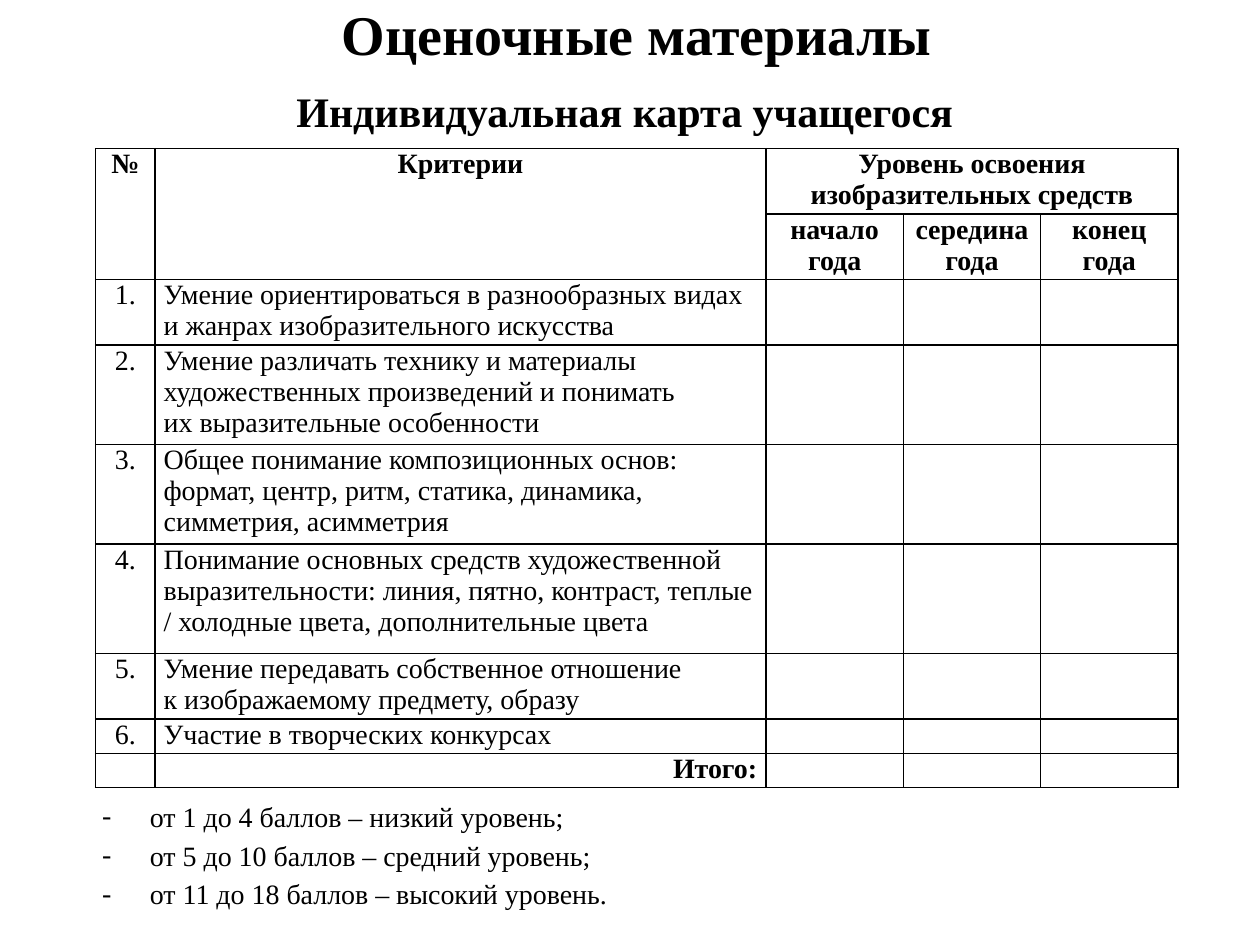
from pptx import Presentation
from pptx.dml.color import RGBColor
from pptx.enum.text import MSO_ANCHOR, MSO_AUTO_SIZE, PP_ALIGN
from pptx.oxml.ns import qn
from pptx.util import Inches, Pt
from lxml import etree

LEFT, CENTER, RIGHT, JUSTIFY = PP_ALIGN.LEFT, PP_ALIGN.CENTER, PP_ALIGN.RIGHT, PP_ALIGN.JUSTIFY
TOP, MIDDLE = MSO_ANCHOR.TOP, MSO_ANCHOR.MIDDLE
NO_AUTOFIT = MSO_AUTO_SIZE.NONE
FONT = "Times New Roman"
BLACK = "000000"
BODY_SIZE = 16

COLUMN_WIDTHS = [0.47, 4.85, 1.09, 1.09, 1.09]
ROW_HEIGHTS = [0.52, 0.52, 0.52, 0.79, 0.79, 0.87, 0.52, 0.25, 0.25]
PERIODS = ["начало года", "середина года", "конец года"]
CRITERIA = [
    "Умение ориентироваться в разнообразных видах и жанрах изобразительного искусства",
    "Умение различать технику и материалы художественных произведений и понимать\n"
    "их выразительные особенности",
    "Общее понимание композиционных основ: формат, центр, ритм, статика, динамика, "
    "симметрия, асимметрия",
    "Понимание основных средств художественной выразительности: линия, пятно, контраст, "
    "теплые / холодные цвета, дополнительные цвета",
    "Умение передавать собственное отношение\nк изображаемому предмету, образу",
    "Участие в творческих конкурсах",
]
LEVELS = [
    "от 1 до 4 баллов – низкий уровень;",
    "от 5 до 10 баллов – средний уровень;",
    "от 11 до 18 баллов – высокий уровень.",
]


def color(hex_string):
    return RGBColor.from_string(hex_string)


def place(shape, box):
    shape.left, shape.top, shape.width, shape.height = [Inches(length) for length in box]


def format_text(text_frame, size, bold, alignment):
    for paragraph in text_frame.paragraphs:
        paragraph.alignment = alignment
        for run in paragraph.runs:
            run.font.name = FONT
            run.font.size = Pt(size)
            run.font.bold = bold
            run.font.color.rgb = color(BLACK)


def fill_title(title, box):
    place(title, box)
    text_frame = title.text_frame
    text_frame.text = "Оценочные материалы"
    text_frame.auto_size = NO_AUTOFIT
    text_frame.vertical_anchor = MIDDLE
    format_text(text_frame, 32, True, CENTER)


def add_subheading(slide, box):
    shape = slide.shapes.add_textbox(*[Inches(length) for length in box])
    text_frame = shape.text_frame
    text_frame.word_wrap = True
    text_frame.text = "Индивидуальная карта учащегося "
    text_frame.paragraphs[0].line_spacing = 1.15
    text_frame.paragraphs[0].space_after = Pt(10)
    format_text(text_frame, 24, True, CENTER)


def fill_levels(body, box):
    place(body, box)
    text_frame = body.text_frame
    text_frame.text = "\n".join(LEVELS)
    text_frame.auto_size = NO_AUTOFIT
    text_frame.vertical_anchor = TOP
    for index, paragraph in enumerate(text_frame.paragraphs):
        properties = paragraph._p.get_or_add_pPr()
        properties.set("marL", str(Inches(0.38)))
        properties.set("indent", str(Inches(-0.38)))
        etree.SubElement(properties, qn("a:buFont")).set("typeface", FONT)
        etree.SubElement(properties, qn("a:buChar")).set("char", "-")
        paragraph.line_spacing = 1.1
        paragraph.space_before = Pt(1 if index else 0)
    format_text(text_frame, BODY_SIZE, False, JUSTIFY)


def format_cell(cell):
    properties = cell._tc.get_or_add_tcPr()
    for side in ("a:lnL", "a:lnR", "a:lnT", "a:lnB"):
        line = etree.SubElement(properties, qn(side), w=str(Pt(1)))
        fill = etree.SubElement(line, qn("a:solidFill"))
        etree.SubElement(fill, qn("a:srgbClr")).set("val", BLACK)
    cell.fill.background()
    cell.margin_left = cell.margin_right = Inches(0.07)
    cell.margin_top = cell.margin_bottom = 0
    end_properties = cell.text_frame.paragraphs[0]._p.get_or_add_endParaRPr()
    end_properties.set("sz", str(BODY_SIZE * 100))


def write_cell(cell, text, bold=False, alignment=LEFT):
    cell.text_frame.text = text
    format_text(cell.text_frame, BODY_SIZE, bold, alignment)


def add_criteria_table(slide, box):
    frame = slide.shapes.add_table(
        len(ROW_HEIGHTS), len(COLUMN_WIDTHS), *[Inches(length) for length in box])
    table = frame.table
    table.first_row = table.horz_banding = False
    for column, width in zip(table.columns, COLUMN_WIDTHS):
        column.width = Inches(width)
    for row, height in zip(table.rows, ROW_HEIGHTS):
        row.height = Inches(height)
    for cell in table.iter_cells():
        format_cell(cell)

    table.cell(0, 0).merge(table.cell(1, 0))
    table.cell(0, 1).merge(table.cell(1, 1))
    table.cell(0, 2).merge(table.cell(0, 4))
    headings = ["№", "Критерии", "Уровень освоения изобразительных средств"]
    for column, heading in enumerate(headings):
        write_cell(table.cell(0, column), heading, True, CENTER)
    for column, period in enumerate(PERIODS, start=2):
        write_cell(table.cell(1, column), period, True, CENTER)
    for number, criterion in enumerate(CRITERIA, start=1):
        write_cell(table.cell(number + 1, 0), f"{number}.", alignment=CENTER)
        write_cell(table.cell(number + 1, 1), criterion)
    write_cell(table.cell(len(ROW_HEIGHTS) - 1, 1), "Итого:", True, RIGHT)


def main():
    presentation = Presentation()
    presentation.slide_width = Inches(10)
    presentation.slide_height = Inches(7.5)
    slide = presentation.slides.add_slide(presentation.slide_layouts[0])
    fill_title(slide.shapes.title, (0.86, 0, 8.39, 0.52))
    fill_levels(slide.placeholders[1], (0.71, 6.27, 7.12, 1.05))
    add_criteria_table(slide, (0.76, 1.18, sum(COLUMN_WIDTHS), sum(ROW_HEIGHTS)))
    add_subheading(slide, (0.03, 0.57, 9.94, 0.54))
    presentation.save("out.pptx")


if __name__ == "__main__":
    main()
